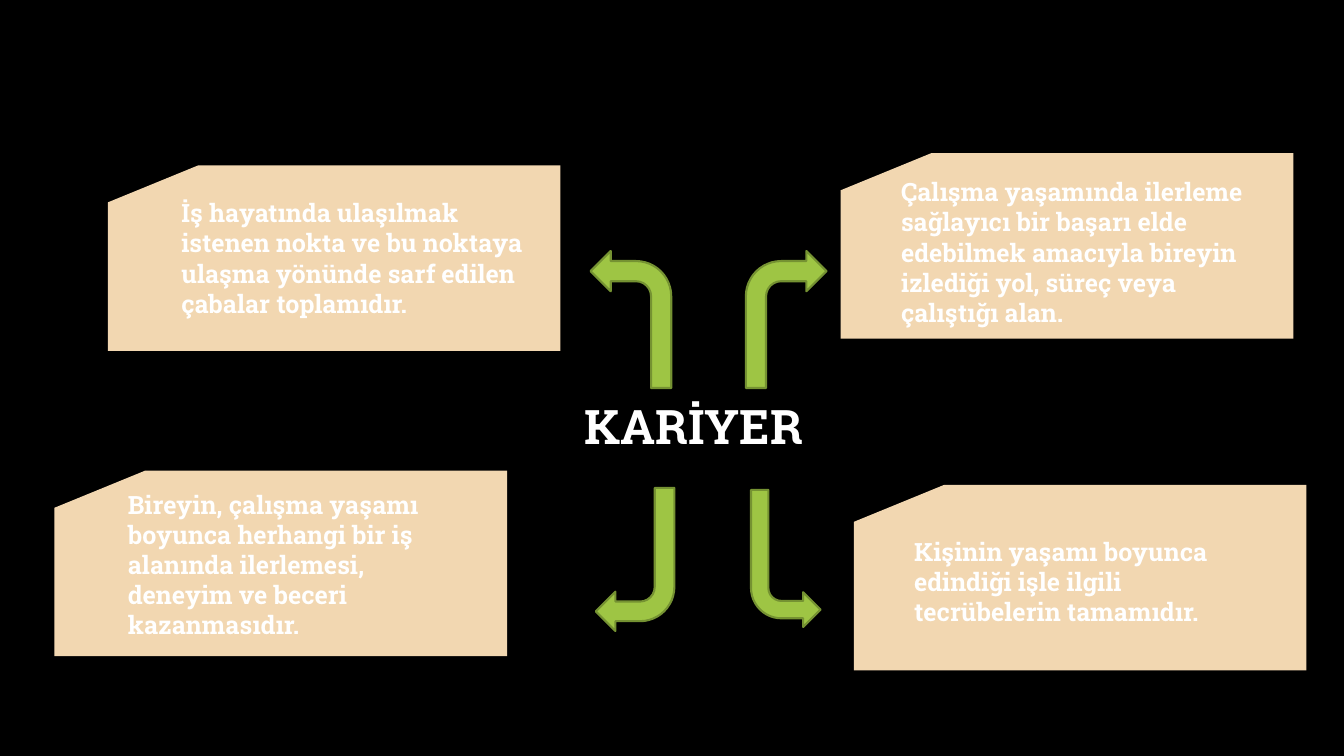
from pptx import Presentation
from pptx.dml.color import RGBColor
from pptx.enum.shapes import MSO_SHAPE
from pptx.enum.text import MSO_ANCHOR, PP_ALIGN
from pptx.util import Pt

COLOURS = {"background": "000000", "card": "F2D7B1", "text": "FFFFFF",
           "arrow": "9EC544", "arrow edge": "759232"}
FONT = "Roboto Slab"
CARD_SIZE = (323.28, 132.48)

TITLE = ("KARİYER", (406.08, 255.6, 178.56, 101.52))

# Definition, card corner, text area (left, top, width, height)
DEFINITIONS = [
    ("İş hayatında ulaşılmak istenen nokta ve bu noktaya ulaşma yönünde "
     "sarf edilen çabalar toplamıdır.",
     (77.04, 118.08), (122.4, 137.52, 265.68, 94.32)),
    ("Kişinin yaşamı boyunca edindiği işle ilgili tecrübelerin tamamıdır.",
     (609.84, 346.32), (645.84, 379.44, 262.08, 72.72)),
    ("Bireyin, çalışma yaşamı boyunca herhangi bir iş alanında ilerlemesi, "
     "deneyim ve beceri kazanmasıdır.",
     (38.88, 336.24), (84.24, 345.6, 257.04, 116.64)),
    ("Çalışma yaşamında ilerleme sağlayıcı bir başarı elde edebilmek "
     "amacıyla bireyin izlediği yol, süreç veya çalıştığı alan.",
     (600.48, 109.44), (636.48, 122.4, 267.12, 116.64)),
]

# Arrow area, rotation, mirrored
ARROWS = [
    ((532.8, 179.28, 57.6, 97.92), 0, False),
    ((536.4, 349.92, 49.68, 97.92), 180, True),
    ((425.52, 348.48, 56.16, 102.24), 180, False),
    ((421.92, 179.28, 57.6, 97.92), 0, True),
]


def colour(name):
    return RGBColor.from_string(COLOURS[name])


def add_text(page, text, area, size=18, align=PP_ALIGN.LEFT,
             anchor=MSO_ANCHOR.TOP, line_spacing=1.0):
    box = page.shapes.add_textbox(*map(Pt, area))
    frame = box.text_frame
    frame.word_wrap = True
    frame.vertical_anchor = anchor
    para = frame.paragraphs[0]
    para.alignment = align
    para.line_spacing = line_spacing
    span = para.add_run()
    span.text = text
    span.font.name = FONT
    span.font.size = Pt(size)
    span.font.bold = True
    span.font.color.rgb = colour("text")


def add_filled(page, kind, area, fill, edge=None):
    shape = page.shapes.add_shape(kind, *map(Pt, area))
    shape.shadow.inherit = False
    shape.fill.solid()
    shape.fill.fore_color.rgb = colour(fill)
    if edge:
        shape.line.color.rgb = colour(edge)
        shape.line.width = Pt(1.5)
    else:
        shape.line.fill.background()
    return shape


deck = Presentation()
deck.slide_width, deck.slide_height = Pt(960), Pt(540)
page = deck.slides.add_slide(deck.slide_layouts[6])
page.background.fill.solid()
page.background.fill.fore_color.rgb = colour("background")

# Central term
title, title_area = TITLE
add_text(page, title, title_area, size=34, align=PP_ALIGN.CENTER,
         anchor=MSO_ANCHOR.MIDDLE, line_spacing=0.9)

# Definition cards
for definition, corner, text_area in DEFINITIONS:
    add_filled(page, MSO_SHAPE.FLOWCHART_CARD, corner + CARD_SIZE, "card")
    add_text(page, definition, text_area)

# Arrows from the term to the cards
for area, rotation, mirrored in ARROWS:
    arrow = add_filled(page, MSO_SHAPE.BENT_ARROW, area, "arrow", "arrow edge")
    arrow.rotation = rotation
    if mirrored:
        arrow.element.spPr.get_or_add_xfrm().set("flipH", "1")

deck.save("out.pptx")
